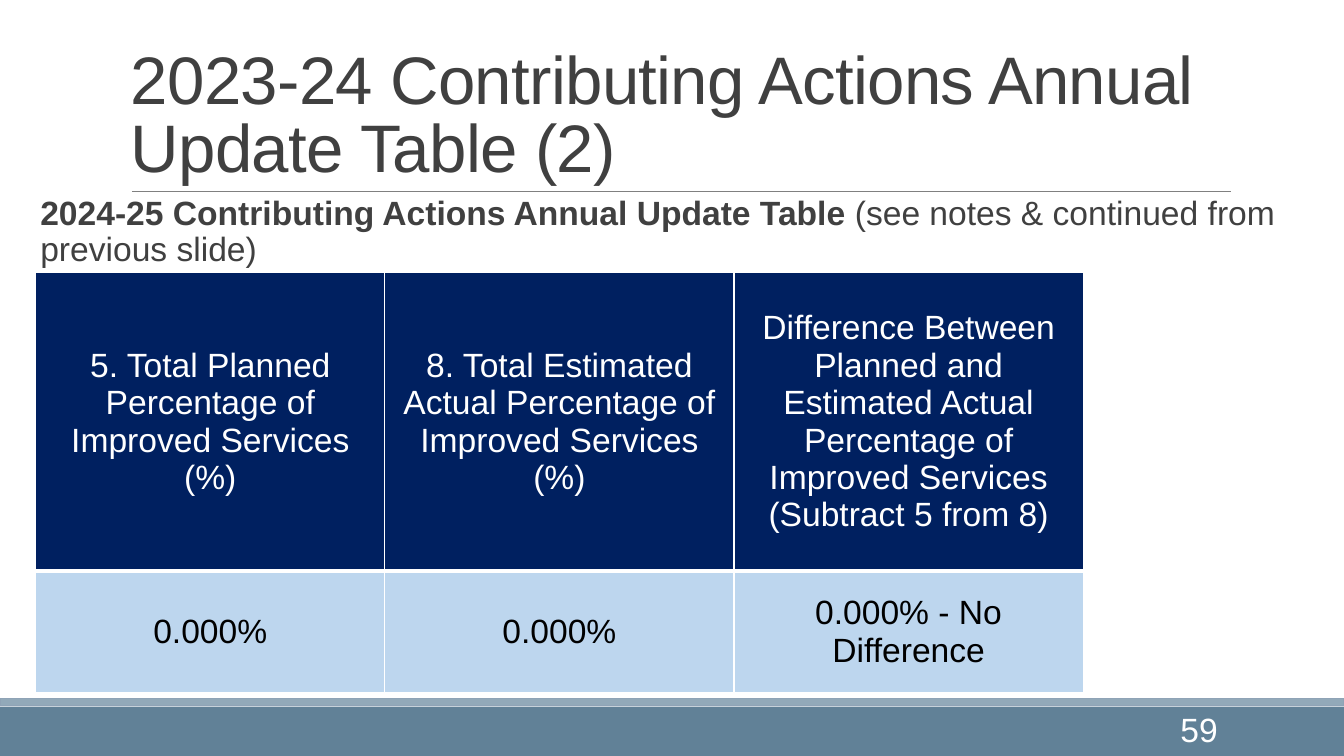
from dataclasses import dataclass
from typing import NamedTuple

from lxml.etree import SubElement
from pptx import Presentation
from pptx.dml.color import RGBColor
from pptx.enum.shapes import MSO_CONNECTOR, MSO_SHAPE
from pptx.enum.text import MSO_ANCHOR, PP_ALIGN
from pptx.oxml.ns import qn
from pptx.util import Pt


@dataclass(frozen=True)
class Theme:
    face: str = "Arial"
    title: float = 48
    body: float = 24
    ink: str = "404040"
    black: str = "000000"
    white: str = "FFFFFF"
    navy: str = "002060"
    pale: str = "BDD6EE"
    steel: str = "618197"
    mist: str = "92A9B9"
    edge: str = "8FA3B6"
    rule: str = "808080"


class Box(NamedTuple):
    left: float
    top: float
    width: float
    height: float


class Band(NamedTuple):
    box: Box
    fill: str
    edge: str = ""


class Span(NamedTuple):
    text: str
    bold: bool = False


class Label(NamedTuple):
    box: Box
    spans: tuple[Span, ...]
    size: float
    color: str
    anchor: MSO_ANCHOR
    align: PP_ALIGN = PP_ALIGN.LEFT
    inset: float = 7.2
    lines: float = 1
    after: float = 0
    track: int = 0


class Row(NamedTuple):
    height: float
    fill: str
    color: str
    base: float
    texts: tuple[str, ...]


THEME = Theme()
BANDS = (
    Band(Box(0, 504.72, 960, 35.28), THEME.steel),
    Band(Box(0, 499, 960, 5), THEME.mist, THEME.edge),
)
LABELS = (
    Label(Box(86.4, 22.3, 815.8, 114.5),
          (Span("2023-24 Contributing Actions Annual Update Table (2)"),),
          THEME.title, THEME.ink, MSO_ANCHOR.BOTTOM, lines=0.85, track=-50),
    Label(Box(25.2, 136.8, 909.4, 54),
          (Span("2024-25 Contributing Actions Annual Update Table ", True),
           Span("(see notes & continued from previous slide)")),
          THEME.body, THEME.ink, MSO_ANCHOR.TOP, inset=3.6, lines=0.9, after=2),
    Label(Box(774, 506.2, 103, 28.8), (Span("59"),),
          THEME.body, THEME.white, MSO_ANCHOR.MIDDLE, PP_ALIGN.RIGHT),
)
GRID = Box(25.5, 194.6, 748.2, 300.2)
ROWS = (
    Row(213.1, THEME.navy, THEME.white, 3, (
        "5. Total Planned Percentage of Improved Services (%)",
        "8. Total Estimated Actual Percentage of Improved Services (%)",
        "Difference Between Planned and Estimated Actual Percentage of "
        "Improved Services (Subtract 5 from 8)")),
    Row(87.1, THEME.pale, THEME.black, 1, (
        "0.000%", "0.000%", "0.000% - No Difference")),
)


def points(box: Box) -> list[Pt]:
    return [Pt(side) for side in box]


def style(font, size: float, color: str, bold: bool = False) -> None:
    font.name = THEME.face
    font.size = Pt(size)
    font.bold = bold
    font.color.rgb = RGBColor.from_string(color)


def add_band(slide, band: Band) -> None:
    shape = slide.shapes.add_shape(MSO_SHAPE.RECTANGLE, *points(band.box))
    shape.shadow.inherit = False
    shape.fill.solid()
    shape.fill.fore_color.rgb = RGBColor.from_string(band.fill)
    if band.edge:
        shape.line.color.rgb = RGBColor.from_string(band.edge)
        shape.line.width = Pt(1.25)
    else:
        shape.line.fill.background()


def add_rule(slide) -> None:
    line = slide.shapes.add_connector(
        MSO_CONNECTOR.STRAIGHT, Pt(94.3), Pt(136.8), Pt(879), Pt(136.8))
    line.line.color.rgb = RGBColor.from_string(THEME.rule)
    line.line.width = Pt(0.5)
    SubElement(line._element.spPr, qn("a:effectLst"))


def add_label(slide, label: Label) -> None:
    frame = slide.shapes.add_textbox(*points(label.box)).text_frame
    frame.word_wrap = True
    frame.vertical_anchor = label.anchor
    frame.margin_left = frame.margin_right = Pt(label.inset)
    frame.margin_top = frame.margin_bottom = Pt(3.6)
    para = frame.paragraphs[0]
    para.alignment = label.align
    para.line_spacing = label.lines
    para.space_after = Pt(label.after)
    for span in label.spans:
        run = para.add_run()
        run.text = span.text
        style(run.font, label.size, label.color, span.bold)
        if label.track:
            run.font._element.set("spc", str(label.track))


def add_edges(cell, base: float) -> None:
    props = cell._tc.get_or_add_tcPr()
    for side, width in (("L", 1), ("R", 1), ("T", 1), ("B", base)):
        line = SubElement(props, qn(f"a:ln{side}"), w=str(Pt(width)))
        fill = SubElement(line, qn("a:solidFill"))
        SubElement(fill, qn("a:srgbClr"), val=THEME.white)


def fill_cell(cell, text: str, row: Row) -> None:
    add_edges(cell, row.base)
    cell.fill.solid()
    cell.fill.fore_color.rgb = RGBColor.from_string(row.fill)
    cell.vertical_anchor = MSO_ANCHOR.MIDDLE
    cell.text_frame.text = text
    para = cell.text_frame.paragraphs[0]
    para.alignment = PP_ALIGN.CENTER
    style(para.runs[0].font, THEME.body, row.color)


def add_grid(slide) -> None:
    count = len(ROWS[0].texts)
    table = slide.shapes.add_table(len(ROWS), count, *points(GRID)).table
    table.horz_banding = False
    for col in table.columns:
        col.width = Pt(GRID.width / count)
    for at, row in enumerate(ROWS):
        table.rows[at].height = Pt(row.height)
        for cell, text in zip(table.rows[at].cells, row.texts):
            fill_cell(cell, text, row)


def main() -> None:
    deck = Presentation()
    deck.slide_width, deck.slide_height = Pt(960), Pt(540)
    slide = deck.slides.add_slide(deck.slide_layouts[6])
    for band in BANDS:
        add_band(slide, band)
    add_rule(slide)
    for label in LABELS:
        add_label(slide, label)
    add_grid(slide)
    deck.save("out.pptx")


if __name__ == "__main__":
    main()
